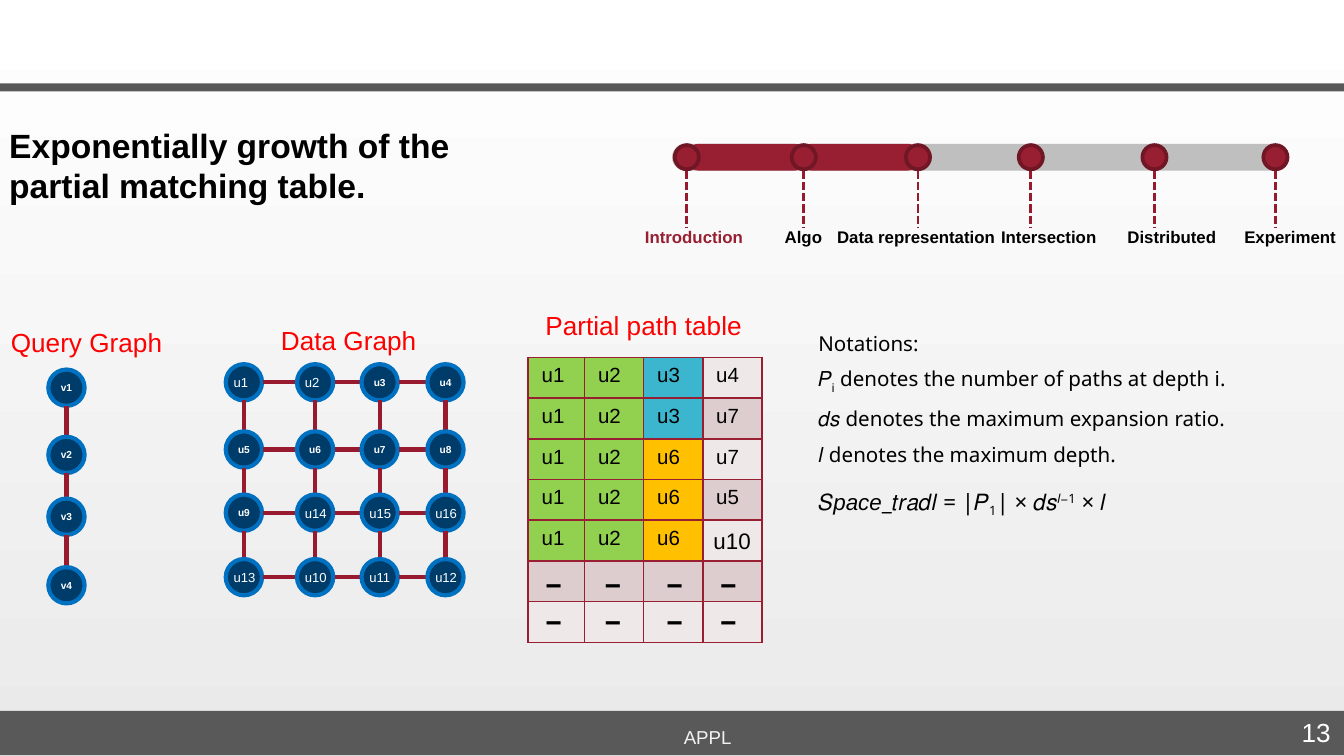
from pptx import Presentation
from pptx import util as u
from pptx.dml.color import RGBColor
from pptx.enum import dml, shapes, text
from pptx.oxml import parse_xml
from pptx.oxml.ns import nsdecls

BLACK, WHITE = RGBColor(0, 0, 0), RGBColor(255, 255, 255)
BAR, PALE, MIST = (RGBColor.from_string(c) for c in ("595959", "F2F2F2", "EAEAEA"))
NAVY, BLUE, RED = (RGBColor.from_string(c) for c in ("003C69", "0070C0", "FF0000"))
CRIMSON, EDGE, RIM = (RGBColor.from_string(c) for c in ("981E32", "981A2F", "701625"))
GREY, GREEN, TEAL = (RGBColor.from_string(c) for c in ("BFBFBF", "92D050", "3CB6CE"))
AMBER, LIGHT, DARK = (RGBColor.from_string(c) for c in ("FFC000", "EFE8E8", "DDCDCE"))

# Content
TITLE = ["Exponentially growth of the", "partial matching table."]
HEADINGS = [("Query Graph", 0.04, 2.41, 1.25, 0.27, 0.04, 0.02),
            ("Data Graph", 2.05, 2.39, 1.25, 0.27, 0.04, 0.02),
            ("Partial path table", 3.96, 2.25, 1.76, 0.34, 0.1, 0.05)]
# stage, stop centre, label left, label width
STAGES = [("Introduction", 5.11, 4.7, 1.18), ("Algo", 5.98, 5.74, 1.18),
          ("Data representation", 6.83, 6.13, 1.98), ("Intersection", 7.67, 7.35, 1.98),
          ("Distributed", 8.59, 8.29, 1.18), ("Experiment", 9.49, 9.16, 0.84)]
BARS = [(5, 4.58, GREY), (5.1, 0.91, CRIMSON), (5.94, 0.91, CRIMSON)]
# name grid, column lefts, row tops
QUERY = ([["v1"], ["v2"], ["v3"], ["v4"]], [0.36], [2.75, 3.25, 3.71, 4.22])
DATA = ([["u1", "u2", "u3", "u4"], ["u5", "u6", "u7", "u8"],
         ["u9", "u14", "u15", "u16"], ["u13", "u10", "u11", "u12"]],
        [1.68, 2.21, 2.69, 3.18], [2.71, 3.21, 3.68, 4.16])
# label box width of the nodes whose name lies over them
LABELS = {"u1": 0.73, "u2": 0.73, **{f"u{n}": 1.82 for n in range(10, 17)}}
PATHS = [["u1", "u2", "u3", "u4"], ["u1", "u2", "u3", "u7"], ["u1", "u2", "u6", "u7"],
         ["u1", "u2", "u6", "u5"], ["u1", "u2", "u6", ""], [""] * 4, [""] * 4]
FILLS = {"u1": GREEN, "u2": GREEN, "u3": TEAL, "u6": AMBER}
COLS = [0.42, 0.44, 0.44, 0.44]
DASH_X, DASH_Y = [3.96, 4.4, 4.86, 5.26], [4.17, 4.45]
BIG = dict(size=12)
NOTES = [
    [("Notations:", {})],
    [("𝑃", {}), ("i", dict(base=-25)), (" denotes the number of paths at depth i.", {})],
    [("𝑑𝑠 denotes the maximum expansion ratio.", {})],
    [("𝑙 denotes the maximum depth.", {})],
    [("𝑆", BIG), ("pace", dict(BIG, name="Arial", italic=True)), ("_𝑡𝑟𝑎𝑑𝑙 = |𝑃", BIG),
     ("1", dict(BIG, base=-25)), ("| × 𝑑𝑠", BIG), ("𝑙−1", dict(BIG, base=30)), (" × 𝑙", BIG)],
]

prs = Presentation()
prs.slide_width = u.Inches(10)
prs.slide_height = prs.slide_width * 9 // 16
s = prs.slides.add_slide(prs.slide_layouts[6])


def inches(*values):
    return [u.Inches(v) for v in values]


def add_run(p, words, size, color=BLACK, base=0, name="Arial", **fmt):
    r = p.add_run()
    r.text = words
    for key, value in dict(fmt, size=u.Pt(size), name=name).items():
        setattr(r.font, key, value)
    r.font.color.rgb = color
    if base:
        r._r.get_or_add_rPr().set("baseline", str(base * 1000))


def set_frame(tf, wrap=True, anchor=text.MSO_ANCHOR.TOP, ins=(0.1, 0.05, 0.1, 0.05)):
    tf.word_wrap, tf.vertical_anchor = wrap, anchor
    for side, value in zip(("left", "top", "right", "bottom"), ins):
        setattr(tf, f"margin_{side}", u.Inches(value))


def add_text(lines, at, size, align=text.PP_ALIGN.LEFT, frame={}, **fmt):
    tf = s.shapes.add_textbox(*inches(*at)).text_frame
    set_frame(tf, **frame)
    for i, line in enumerate(lines):
        p = tf.add_paragraph() if i else tf.paragraphs[0]
        p.alignment = align
        add_run(p, line, size, **fmt)


def add_shape(kind, at, fill, line=None, width=2.25):
    sp = s.shapes.add_shape(kind, *inches(*at))
    sp.shadow.inherit = False
    sp.fill.solid()
    sp.fill.fore_color.rgb = fill
    if line is None:
        sp.line.fill.background()
    else:
        sp.line.color.rgb, sp.line.width = line, u.Pt(width)
    return sp


def add_line(x1, y1, x2, y2, width=2.25, dash=None):
    c = s.shapes.add_connector(shapes.MSO_CONNECTOR.STRAIGHT, *inches(x1, y1, x2, y2))
    c.line.color.rgb, c.line.width = EDGE, u.Pt(width)
    if dash:
        c.line.dash_style = dash
    c._element.spPr.append(parse_xml(f"<a:effectLst {nsdecls('a')}/>"))


def add_graph(names, lefts, tops, d=0.27):
    for i, (y, row) in enumerate(zip(tops, names)):
        for j, (x, name) in enumerate(zip(lefts, row)):
            sp = add_shape(shapes.MSO_SHAPE.OVAL, (x, y, d, d), NAVY, BLUE)
            if name in LABELS:
                add_text([name], (x - 0.04, y + 0.03, LABELS[name], 0.22), 7, color=WHITE)
            else:
                set_frame(sp.text_frame, True, text.MSO_ANCHOR.MIDDLE, (0.04, 0.02, 0.04, 0.02))
                p = sp.text_frame.paragraphs[0]
                p.alignment = text.PP_ALIGN.CENTER
                add_run(p, name, 5.4, WHITE, bold=True)
            if j + 1 < len(lefts):
                add_line(x + d + 0.01, y + d / 2, lefts[j + 1], y + d / 2)
            if i + 1 < len(tops):
                add_line(x + d / 2, y + d, x + d / 2, tops[i + 1])


# Background, bars and footer
bg = s.background.fill
bg.gradient()
bg.gradient_angle = 90
for stop, color in zip(bg.gradient_stops, (MIST, WHITE)):
    stop.color.rgb = color
for y, h in ((5.29, 0.33), (0.62, 0.06)):
    add_shape(shapes.MSO_SHAPE.RECTANGLE, (0, y, 10, h), BAR)
add_text(["APPL"], (1.9, 5.28, 6.73, 0.34), 10, text.PP_ALIGN.CENTER,
         dict(anchor=text.MSO_ANCHOR.BOTTOM), color=PALE)
add_text(["13"], (8.64, 5.28, 1.36, 0.34), 14, text.PP_ALIGN.RIGHT, color=WHITE)

# Graphs
add_graph(*QUERY)
add_graph(*DATA)

# Partial path table
tbl = s.shapes.add_table(len(PATHS), len(COLS), *inches(3.93, 2.66, sum(COLS), 2.12)).table
for col, w in zip(tbl.columns, COLS):
    col.width = u.Inches(w)
for i, row in enumerate(PATHS):
    tbl.rows[i].height = u.Inches(2.12 / len(PATHS))
    for j, name in enumerate(row):
        cell = tbl.cell(i, j)
        p = cell.text_frame.paragraphs[0]
        if name:
            add_run(p, name, 11)
        else:
            p._p.get_or_add_endParaRPr().set("sz", "1100")
        tcPr = cell._tc.get_or_add_tcPr()
        for side in ("lnL", "lnR", "lnT", "lnB"):
            tcPr.append(parse_xml(
                f'<a:{side} {nsdecls("a")} w="12700"><a:solidFill>'
                f'<a:srgbClr val="{CRIMSON}"/></a:solidFill></a:{side}>'))
        cell.fill.solid()
        cell.fill.fore_color.rgb = FILLS.get(name, DARK if i % 2 else LIGHT)

# Marks over the open table cells
add_text(["u10"], (5.21, 3.87, 0.95, 0.3), 12)
for y in DASH_Y:
    for x in DASH_X:
        add_text(["ˉ"], (x, y, 0.62, 0.57), 28)

# Title and headings
add_text(TITLE, (-0.03, 0.88, 7.11, 0.71), 18, bold=True)
for words, x, y, w, h, dx, dy in HEADINGS:
    add_text([words], (x, y, w, h), 14, frame=dict(ins=(dx, dy, dx, dy)), color=RED)

# Progress timeline
for x, w, color in BARS:
    add_shape(shapes.MSO_SHAPE.ROUNDED_RECTANGLE, (x, 1.07, w, 0.2), color).adjustments[0] = 0.5
for i, (stage, x, left, w) in enumerate(STAGES):
    add_line(x, 1.27, x, 1.7, 1.5, dml.MSO_LINE.SQUARE_DOT)
    add_shape(shapes.MSO_SHAPE.OVAL, (x - 0.09, 1.08, 0.18, 0.18), CRIMSON, RIM, 2)
    add_text([stage], (left, 1.64, w, 0.25), 9, frame=dict(ins=(0.1, 0.05, 0, 0.05)),
             bold=True, color=BLACK if i else CRIMSON)

# Notations
tf = s.shapes.add_textbox(*inches(5.99, 2.41, 3.95, 1.45)).text_frame
set_frame(tf)
for i, runs in enumerate(NOTES):
    p = tf.add_paragraph() if i else tf.paragraphs[0]
    if i:
        p.space_before = u.Pt(6)
    for words, fmt in runs:
        add_run(p, words, **{"size": 11, "name": "Noto Sans", **fmt})
p.line_spacing = u.Pt(22)

prs.save("out.pptx")
